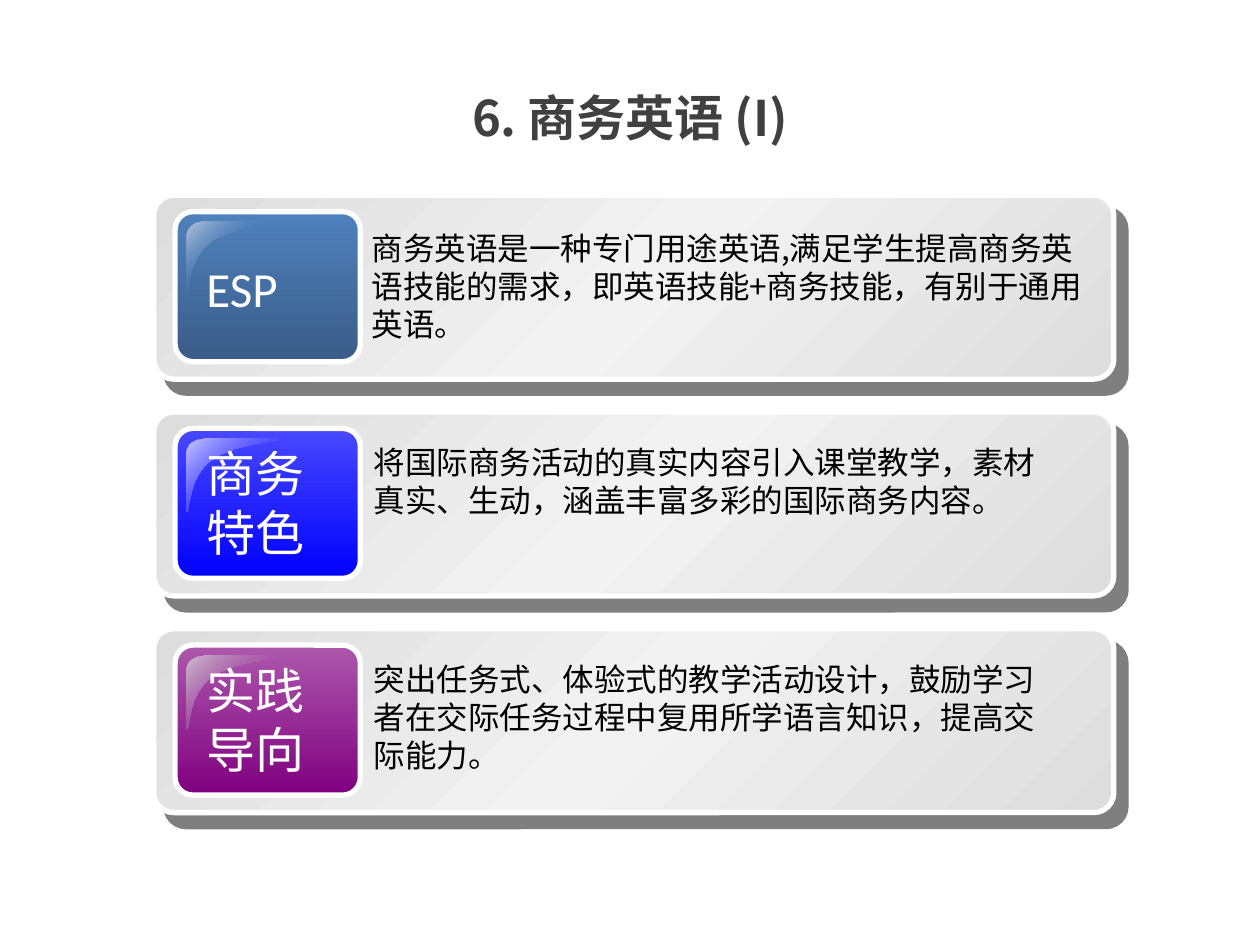
from lxml import etree
from pptx import Presentation
from pptx.dml.color import RGBColor
from pptx.enum.shapes import MSO_SHAPE
from pptx.enum.text import MSO_ANCHOR, MSO_AUTO_SIZE, PP_ALIGN
from pptx.oxml.ns import qn
from pptx.util import Inches, Pt

ROUNDED = MSO_SHAPE.ROUNDED_RECTANGLE
TOP, MIDDLE = MSO_ANCHOR.TOP, MSO_ANCHOR.MIDDLE
LEFT, CENTER = PP_ALIGN.LEFT, PP_ALIGN.CENTER
GROW, FIXED = MSO_AUTO_SIZE.SHAPE_TO_FIT_TEXT, MSO_AUTO_SIZE.NONE

WHITE = RGBColor(0xFF, 0xFF, 0xFF)
BLACK = RGBColor(0x00, 0x00, 0x00)
TITLE_GRAY = RGBColor(0x40, 0x40, 0x40)
CARD_EDGE = RGBColor(0xDD, 0xDD, 0xDD)
CARD_MIDDLE = RGBColor(0xF2, 0xF2, 0xF2)
STEEL_TOP = RGBColor(0x4F, 0x81, 0xBD)
STEEL_BOTTOM = RGBColor(0x3A, 0x5C, 0x88)
STEEL_GLOSS = RGBColor(0xBB, 0xC7, 0xDE)
BLUE_TOP = RGBColor(0x48, 0x48, 0xFF)
BLUE_BOTTOM = RGBColor(0x00, 0x00, 0xFF)
BLUE_GLOSS = RGBColor(0xC9, 0xC9, 0xFF)
PURPLE_TOP = RGBColor(0xAC, 0x58, 0xAC)
PURPLE_BOTTOM = RGBColor(0x80, 0x00, 0x80)
PURPLE_GLOSS = RGBColor(0xCE, 0xBF, 0xCE)

CJK_FONT = "Noto Sans CJK SC"
TITLE_FORMAT = {"name": CJK_FONT, "size": Pt(28), "bold": True}
LABEL_FORMAT = {"name": "Calibri", "size": Pt(28)}
BODY_FORMAT = {"name": CJK_FONT, "size": Pt(18)}
BODY_SPACING = Pt(21.6)

FIRST_CARD_TOP, CARD_PITCH = 1.55, 1.72
CARD_LEFT, CARD_WIDTH, CARD_HEIGHT = 1.22, 7.62, 1.46
TILE_LEFT, TILE_WIDTH, TILE_HEIGHT = 1.39, 1.47, 1.19
LABEL_LEFT = 1.54

# Label lines, label (offset, width, height), body, body (left, offset, width, height),
# tile colours and gloss stops
CARDS = [
    (["ESP"], (0.45, 1.02, 0.61),
     "商务英语是一种专门用途英语,满足学生提高商务英语技能的需求，"
     "即英语技能+商务技能，有别于通用英语。",
     (2.85, 0.22, 5.92, 1.01), (STEEL_TOP, STEEL_BOTTOM),
     [(0, STEEL_GLOSS, 100), (50, STEEL_TOP, 0), (100, STEEL_GLOSS, 100)]),
    (["商务", "特色"], (0.2, 1.26, 1.11),
     "将国际商务活动的真实内容引入课堂教学，素材真实、生动，"
     "涵盖丰富多彩的国际商务内容。",
     (2.87, 0.2, 5.6, 0.71), (BLUE_TOP, BLUE_BOTTOM),
     [(0, BLUE_GLOSS, 100), (100, BLUE_BOTTOM, 0)]),
    (["实践", "导向"], (0.2, 1.26, 1.11),
     "突出任务式、体验式的教学活动设计，鼓励学习者在交际任务过程中"
     "复用所学语言知识，提高交际能力。",
     (2.87, 0.2, 5.6, 1.01), (PURPLE_TOP, PURPLE_BOTTOM),
     [(0, PURPLE_GLOSS, 100), (100, PURPLE_BOTTOM, 0)]),
]

# Gloss outline relative to the card: three points are a curve, one is a line
GLOSS_START = (0.4, 0.21)
GLOSS_SEGMENTS = [
    [(0.32, 0.21), (0.26, 0.26), (0.26, 0.33)],
    [(0.26, 0.79)],
    [(0.29, 0.8), (0.27, 0.51), (0.46, 0.38)],
    [(0.64, 0.25), (0.99, 0.24), (0.98, 0.21)],
    [GLOSS_START],
]


def add_color(parent, color, alpha=100):
    element = etree.SubElement(parent, qn("a:srgbClr"), val=str(color))
    if alpha < 100:
        etree.SubElement(element, qn("a:alpha"), val=str(alpha * 1000))


def set_gradient(shape, angle, stops):
    """Fill with (position %, colour, opacity %) stops, angle clockwise."""
    shape.fill.gradient()
    gradient = shape._element.spPr.find(qn("a:gradFill"))
    for child in list(gradient):
        gradient.remove(child)
    stop_list = etree.SubElement(gradient, qn("a:gsLst"))
    for position, color, alpha in stops:
        stop = etree.SubElement(stop_list, qn("a:gs"), pos=str(position * 1000))
        add_color(stop, color, alpha)
    etree.SubElement(gradient, qn("a:lin"), ang=str(angle * 60000), scaled="0")


def add_shadow(shape):
    effects = shape._element.spPr.find(qn("a:effectLst"))
    shadow = etree.SubElement(effects, qn("a:outerShdw"), blurRad="0",
                              dist=str(Pt(10.6)), dir=str(49 * 60000),
                              algn="ctr", rotWithShape="0")
    add_color(shadow, BLACK, 50)


def add_panel(slide, left, top, width, height, corner, angle, stops):
    panel = slide.shapes.add_shape(ROUNDED, Inches(left), Inches(top),
                                   Inches(width), Inches(height))
    panel.adjustments[0] = corner
    panel.shadow.inherit = False
    set_gradient(panel, angle, stops)
    panel.line.color.rgb = WHITE
    panel.line.width = Pt(3)
    return panel


def bend_segments(freeform, segments):
    """Join the straight pieces of each three-point segment into one curve."""
    pieces = iter(list(freeform._element.iter(qn("a:lnTo"))))
    for segment in segments:
        first, *others = [next(pieces) for _ in segment]
        if others:
            first.tag = qn("a:cubicBezTo")
            for piece in others:
                first.append(piece[0])
                piece.getparent().remove(piece)


def add_gloss(slide, top, stops):
    def place(point):
        return Inches(CARD_LEFT + point[0]), Inches(top + point[1])

    builder = slide.shapes.build_freeform(*place(GLOSS_START))
    builder.add_line_segments([place(point) for segment in GLOSS_SEGMENTS
                               for point in segment], close=True)
    gloss = builder.convert_to_shape()
    bend_segments(gloss, GLOSS_SEGMENTS)
    gloss.shadow.inherit = False
    gloss.line.fill.background()
    set_gradient(gloss, 45, stops)


def add_text(slide, left, top, width, height, lines, text_format, color,
             align=LEFT, anchor=TOP, spacing=None, sizing=GROW):
    box = slide.shapes.add_textbox(Inches(left), Inches(top),
                                   Inches(width), Inches(height))
    frame = box.text_frame
    frame.word_wrap = True
    frame.auto_size = sizing
    frame.vertical_anchor = anchor
    frame.text = "\n".join(lines)
    for paragraph in frame.paragraphs:
        paragraph.alignment = align
        paragraph.line_spacing = spacing
        for run in paragraph.runs:
            for attribute, value in text_format.items():
                setattr(run.font, attribute, value)
            run.font.color.rgb = color
            etree.SubElement(run.font._element, qn("a:ea"),
                             typeface=text_format["name"])


def add_card(slide, top, label, label_box, body, body_box, tile_colors, gloss_stops):
    card = add_panel(slide, CARD_LEFT, top, CARD_WIDTH, CARD_HEIGHT, 0.109, 45,
                     [(0, CARD_EDGE, 100), (50, CARD_MIDDLE, 100),
                      (100, CARD_EDGE, 100)])
    add_shadow(card)
    tile_top, tile_bottom = tile_colors
    add_panel(slide, TILE_LEFT, top + 0.13, TILE_WIDTH, TILE_HEIGHT, 0.119, 90,
              [(0, tile_top, 100), (100, tile_bottom, 100)])
    add_gloss(slide, top, gloss_stops)
    label_offset, label_width, label_height = label_box
    add_text(slide, LABEL_LEFT, top + label_offset, label_width, label_height,
             label, LABEL_FORMAT, WHITE)
    body_left, body_offset, body_width, body_height = body_box
    add_text(slide, body_left, top + body_offset, body_width, body_height,
             [body], BODY_FORMAT, BLACK, spacing=BODY_SPACING)


def main():
    presentation = Presentation()
    presentation.slide_width = Inches(10)
    presentation.slide_height = Inches(7.5)
    slide = presentation.slides.add_slide(presentation.slide_layouts[6])
    add_text(slide, 0.5, 0.3, 9, 1.25, ["6. 商务英语 (I)"], TITLE_FORMAT,
             TITLE_GRAY, CENTER, MIDDLE, sizing=FIXED)
    for index, card in enumerate(CARDS):
        add_card(slide, FIRST_CARD_TOP + index * CARD_PITCH, *card)
    presentation.save("out.pptx")


if __name__ == "__main__":
    main()
